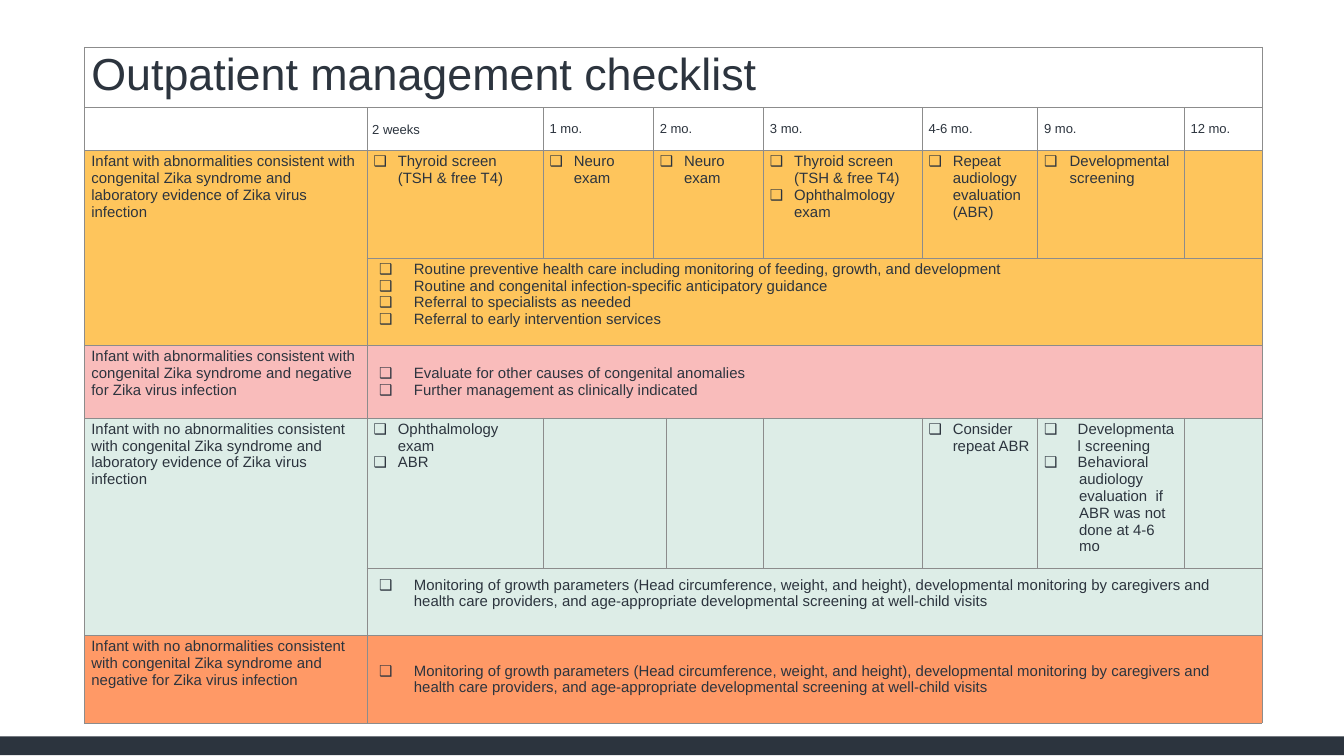
from lxml.etree import SubElement
from pptx import Presentation
from pptx.dml.color import RGBColor
from pptx.enum.shapes import MSO_SHAPE
from pptx.enum.text import MSO_ANCHOR
from pptx.oxml.ns import qn
from pptx.util import Inches, Pt

INK = RGBColor(0x2C, 0x34, 0x3E)
GRID = RGBColor(0x8C, 0x8C, 0x8C)
WHITE = RGBColor(0xFF, 0xFF, 0xFF)
AMBER = RGBColor(0xFE, 0xC5, 0x5C)
PINK = RGBColor(0xF9, 0xBC, 0xBB)
MINT = RGBColor(0xDD, 0xED, 0xE7)
ORANGE = RGBColor(0xFF, 0x99, 0x66)

COLUMN_WIDTHS = [2.1, 1.31, 0.82, 0.1, 0.72, 1.18, 0.86, 1.09, 0.58]
ROW_HEIGHTS = [0.45, 0.32, 0.8, 0.65, 0.54, 1.12, 0.5, 0.65]
ROW_COLORS = [WHITE, WHITE, AMBER, AMBER, PINK, MINT, MINT, ORANGE]
MERGES = [
    (0, 0, 0, 8), (1, 3, 1, 4), (2, 0, 3, 0), (2, 3, 2, 4), (3, 1, 3, 8),
    (4, 1, 4, 8), (5, 0, 6, 0), (5, 2, 5, 3), (6, 1, 6, 8), (7, 1, 7, 8),
]

VISITS = {2: "1 mo.", 3: "2 mo.", 5: "3 mo.", 6: "4-6 mo.", 7: "9 mo.", 8: "12 mo."}
INFANT_GROUPS = {
    2: "Infant with abnormalities consistent with congenital Zika syndrome and "
       "laboratory evidence of Zika virus infection",
    4: "Infant with abnormalities consistent with congenital Zika syndrome and "
       "negative for Zika virus infection",
    5: "Infant with no abnormalities consistent with congenital Zika syndrome and "
       "laboratory evidence of Zika virus infection",
    7: "Infant with no abnormalities consistent with congenital Zika syndrome and "
       "negative for Zika virus infection",
}
MONITORING = (
    "Monitoring of growth parameters (Head circumference, weight, and height), "
    "developmental monitoring by caregivers and health care providers, and "
    "age-appropriate developmental screening at well-child visits"
)
VISIT_CHECKS = [
    (2, 1, 0.18, ["Thyroid screen\v(TSH & free T4)"]),
    (2, 2, 0.18, ["Neuro exam"]),
    (2, 3, 0.18, ["Neuro exam"]),
    (2, 5, 0.18, ["Thyroid screen (TSH & free T4)", "Ophthalmology exam"]),
    (2, 6, 0.18, ["Repeat audiology evaluation (ABR)"]),
    (2, 7, 0.19, ["Developmental screening"]),
    (5, 1, 0.18, ["Ophthalmology exam", "ABR"]),
    (5, 6, 0.18, ["Consider repeat ABR"]),
    (5, 7, 0.25, ["Developmental screening", "Behavioral"]),
]
ONGOING_CARE = {
    3: ["Routine preventive health care including monitoring of feeding, growth, and development",
        "Routine and congenital infection-specific anticipatory guidance",
        "Referral to specialists as needed",
        "Referral to early intervention services"],
    4: ["Evaluate for other causes of congenital anomalies",
        "Further management as clinically indicated"],
    6: [MONITORING],
    7: [MONITORING],
}


def style_font(paragraph, size):
    paragraph.font.name = "Arial"
    paragraph.font.size = Pt(size)
    paragraph.font.color.rgb = INK


def style_cell(cell, color):
    properties = cell._tc.get_or_add_tcPr()
    for side in ("lnL", "lnR", "lnT", "lnB"):
        border = SubElement(properties, qn(f"a:{side}"), w=str(Pt(0.25)))
        line_fill = SubElement(border, qn("a:solidFill"))
        SubElement(line_fill, qn("a:srgbClr"), val=str(GRID))
    cell.fill.solid()
    cell.fill.fore_color.rgb = color
    cell.margin_left = cell.margin_right = Inches(0.05)
    cell.margin_top = cell.margin_bottom = Inches(0.02)
    style_font(cell.text_frame.paragraphs[0], 8)


def write_label(cell, text, size=8, anchor=MSO_ANCHOR.TOP):
    paragraph = cell.text_frame.paragraphs[0]
    paragraph.text = text
    style_font(paragraph, size)
    cell.vertical_anchor = anchor


def indent(paragraph, left, first_line):
    properties = paragraph._p.get_or_add_pPr()
    properties.set("marL", str(Inches(left)))
    properties.set("indent", str(Inches(first_line)))
    return properties


def write_checklist(cell, items, left, hanging):
    frame = cell.text_frame
    frame.text = "\n".join(items)
    for paragraph in frame.paragraphs:
        properties = indent(paragraph, left, -hanging)
        for old_font in properties.findall(qn("a:defRPr")):
            properties.remove(old_font)
        SubElement(properties, qn("a:buFont"), typeface="Arial")
        SubElement(properties, qn("a:buChar"), char="❑")
        style_font(paragraph, 8)


def add_continuation(cell, text, left):
    paragraph = cell.text_frame.add_paragraph()
    paragraph.text = text
    indent(paragraph, left, 0)
    style_font(paragraph, 8)


def add_grid(slide):
    table = slide.shapes.add_table(
        len(ROW_HEIGHTS), len(COLUMN_WIDTHS),
        Inches(0.63), Inches(0.35), Inches(8.76), Inches(5.03),
    ).table
    table.first_row = table.horz_banding = False
    for column, width in zip(table.columns, COLUMN_WIDTHS):
        column.width = Inches(width)
    for row, height, color in zip(table.rows, ROW_HEIGHTS, ROW_COLORS):
        row.height = Inches(height)
        for cell in row.cells:
            style_cell(cell, color)
    for top, left, bottom, right in MERGES:
        table.cell(top, left).merge(table.cell(bottom, right))
    return table


def fill_checklist(table):
    write_label(table.cell(0, 0), "Outpatient management checklist", 24)

    first_visit = table.cell(1, 1)
    write_label(first_visit, "2 weeks", 7, MSO_ANCHOR.MIDDLE)
    first_visit.text_frame.paragraphs[0].line_spacing = 1.15
    first_visit.margin_left = first_visit.margin_right = Inches(0.04)
    first_visit.margin_top = first_visit.margin_bottom = 0
    for column, visit in VISITS.items():
        write_label(table.cell(1, column), visit, 7, MSO_ANCHOR.MIDDLE)

    for row, group in INFANT_GROUPS.items():
        write_label(table.cell(row, 0), group)
    for row, column, hanging, checks in VISIT_CHECKS:
        write_checklist(table.cell(row, column), checks, hanging, hanging)
    add_continuation(
        table.cell(5, 7), "audiology evaluation  if ABR was not done at 4-6 mo", 0.26)

    for row, care in ONGOING_CARE.items():
        write_checklist(table.cell(row, 1), care, 0.3, 0.26)
    for row in (4, 7):
        table.cell(row, 1).vertical_anchor = MSO_ANCHOR.MIDDLE
    table.cell(6, 1).margin_top = Inches(0.06)


def add_footer_bar(slide):
    bar = slide.shapes.add_shape(
        MSO_SHAPE.RECTANGLE, 0, Inches(5.48), Inches(10), Inches(0.14))
    bar.shadow.inherit = False
    bar.fill.solid()
    bar.fill.fore_color.rgb = INK
    bar.line.fill.background()


def main():
    presentation = Presentation()
    presentation.slide_width = Inches(10)
    presentation.slide_height = Inches(10) * 9 // 16
    slide = presentation.slides.add_slide(presentation.slide_layouts[6])
    add_footer_bar(slide)
    fill_checklist(add_grid(slide))
    presentation.save("out.pptx")


if __name__ == "__main__":
    main()
